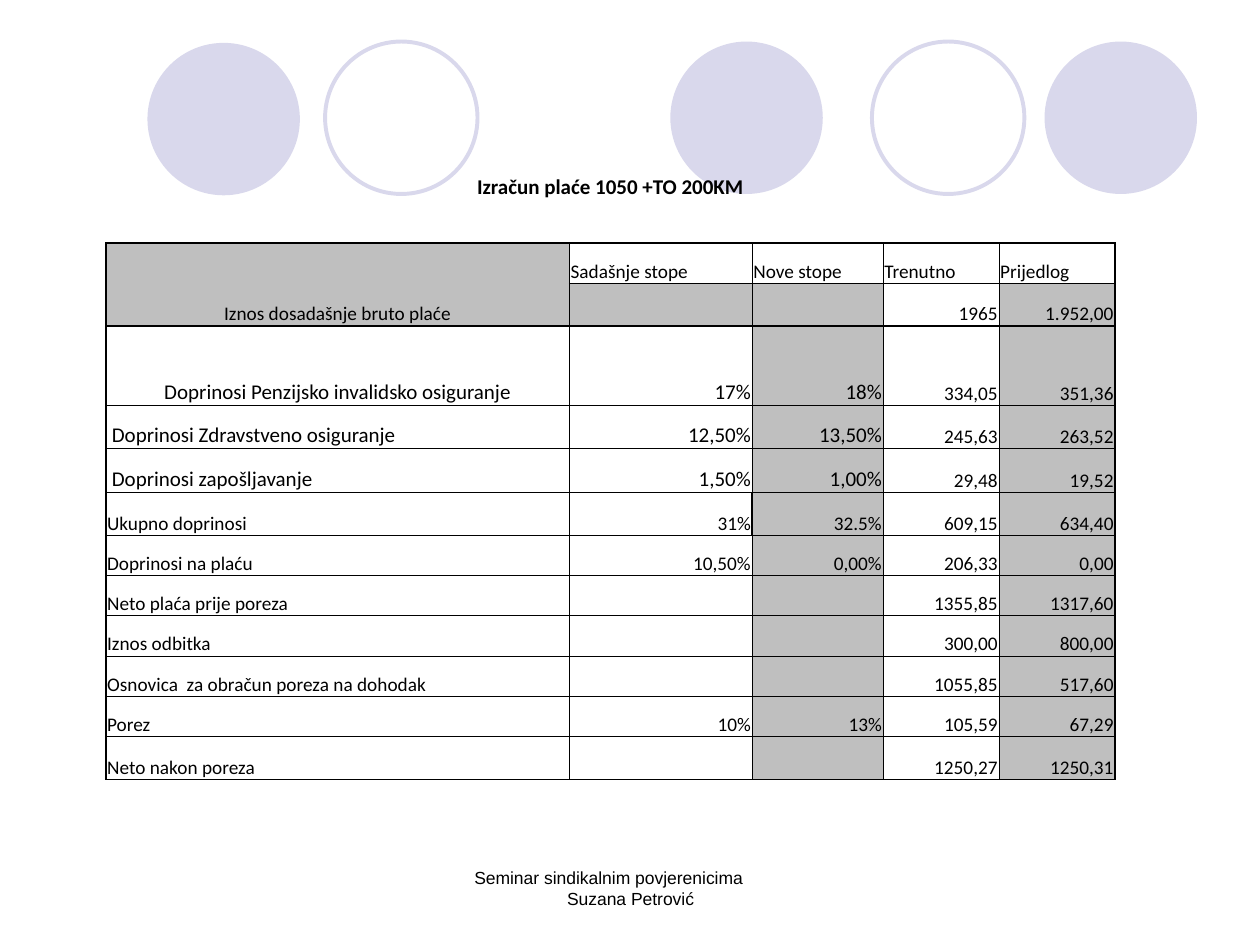
from lxml import etree
from pptx import Presentation
from pptx import util as u
from pptx.dml.color import RGBColor
from pptx.enum import shapes, text
from pptx.oxml.ns import qn

BLACK, WHITE, GREY, LILAC = "000000", "FFFFFF", "BFBFBF", "D9D8EC"
LEFT, CENTER, RIGHT = text.PP_ALIGN.LEFT, text.PP_ALIGN.CENTER, text.PP_ALIGN.RIGHT
CIRCLES = [(5.32, 0.33, True), (8.29, 0.33, True), (1.17, 0.34, True),
           (6.92, 0.33, False), (2.58, 0.33, False)]
COLUMNS = [0.92] * 4 + [1.45, 1.04, 0.92, 0.92]
HEIGHTS = [0.34, 0.34, 0.32, 0.34, 0.63, 0.34, 0.35, 0.34] + [0.32] * 5 + [0.34]
FIRST_ROW, LABEL_SPAN, RATE_COLUMNS = 2, 4, (4, 5)
CONTRIBUTION_ROWS = (4, 5, 6)
HEAVY_LINES = (2, 4, 7, 8, 14)
TITLE = "Izračun plaće 1050 +TO 200KM"
ROWS = [
    ("Iznos dosadašnje bruto plaće", "Sadašnje stope", "Nove stope", "Trenutno", "Prijedlog"),
    ("", "", "", "1965", "1.952,00"),
    (" Doprinosi Penzijsko invalidsko osiguranje ", "17%", "18%", "334,05", "351,36"),
    (" Doprinosi Zdravstveno osiguranje", "12,50%", "13,50%", "245,63", "263,52"),
    (" Doprinosi zapošljavanje", "1,50%", "1,00%", "29,48", "19,52"),
    ("Ukupno doprinosi", "31%", "32.5%", "609,15", "634,40"),
    ("Doprinosi na plaću", "10,50%", "0,00%", "206,33", "0,00"),
    ("Neto plaća prije poreza", "", "", "1355,85", "1317,60"),
    ("Iznos odbitka", "", "", "300,00", "800,00"),
    ("Osnovica  za obračun poreza na dohodak", "", "", "1055,85", "517,60"),
    ("Porez", "10%", "13%", "105,59", "67,29"),
    ("Neto nakon poreza", "", "", "1250,27", "1250,31"),
]


def color(value):
    """Turn a hex string into a colour."""
    return RGBColor.from_string(value)


def add_circle(page, left, top, filled):
    """Draw one decorative circle, either solid or as a ring."""
    circle = page.shapes.add_shape(shapes.MSO_SHAPE.OVAL, u.Inches(left), u.Inches(top),
                                   u.Inches(1.21), u.Inches(1.21))
    circle.shadow.inherit = False
    if filled:
        circle.fill.solid()
        circle.fill.fore_color.rgb = color(LILAC)
        circle.line.fill.background()
    else:
        circle.fill.background()
        circle.line.color.rgb = color(LILAC)
        circle.line.width = u.Pt(2.25)


def add_span(para, words, size, font, bold=False):
    """Add one formatted run to a paragraph."""
    span = para.add_run()
    span.text = words
    span.font.size = u.Pt(size)
    span.font.name = font
    span.font.bold = bold
    span.font.color.rgb = color(BLACK)


def add_footer(page):
    """Write the two footer lines, the second set further right."""
    box = page.shapes.add_textbox(u.Inches(3.42), u.Inches(6.83), u.Inches(3.17), u.Inches(0.5))
    frame = box.text_frame
    frame.word_wrap = True
    frame.margin_right = u.Inches(0.45)
    first, second = frame.paragraphs[0], frame.add_paragraph()
    for para, words in ((first, "Seminar sindikalnim povjerenicima"), (second, "Suzana Petrović")):
        para.alignment = CENTER
        add_span(para, words, 10, "Arial")
    second._p.get_or_add_pPr().set("marL", str(u.Inches(0.35)))


def horizontal_weight(line, column):
    """Give the weight of a horizontal grid line, or 0 for none."""
    if line < FIRST_ROW or (line == 3 and column < LABEL_SPAN):
        return 0
    return 1 if line in HEAVY_LINES else 0.5


def vertical_weight(line, row):
    """Give the weight of a vertical grid line, or 0 for none."""
    if row < FIRST_ROW or 0 < line < LABEL_SPAN:
        return 0
    return 1 if line in (0, len(COLUMNS)) or (line, row) == (5, 7) else 0.5


def set_borders(cell, row, column):
    """Set the four borders of a cell from the grid rules."""
    weights = {"a:lnL": vertical_weight(column, row), "a:lnR": vertical_weight(column + 1, row),
               "a:lnT": horizontal_weight(row, column), "a:lnB": horizontal_weight(row + 1, column)}
    properties = cell._tc.get_or_add_tcPr()
    for tag, weight in weights.items():
        line = etree.SubElement(properties, qn(tag), w=str(u.Pt(weight)))
        if weight:
            fill = etree.SubElement(line, qn("a:solidFill"))
            etree.SubElement(fill, qn("a:srgbClr"), val=BLACK)
        else:
            etree.SubElement(line, qn("a:noFill"))


def fill_color(row, column):
    """Choose the fill of a cell, or None for no fill."""
    if row < FIRST_ROW:
        return None
    if row in (2, 3):
        grey = column < LABEL_SPAN or (row == 3 and column != 6)
    else:
        grey = column in (5, 7)
    if grey:
        return GREY
    return WHITE if row in CONTRIBUTION_ROWS and column != 6 else None


def format_cell(cell, row, column):
    """Apply borders, fill, insets and anchor to a cell."""
    set_borders(cell, row, column)
    fill = fill_color(row, column)
    if fill:
        cell.fill.solid()
        cell.fill.fore_color.rgb = color(fill)
    else:
        cell.fill.background()
    cell.margin_left = cell.margin_top = cell.margin_right = u.Inches(0.01)
    cell.margin_bottom = 0
    cell.vertical_anchor = text.MSO_ANCHOR.BOTTOM


def write_cell(cell, words, align, size, bold=False):
    """Write one aligned line into a cell."""
    para = cell.text_frame.paragraphs[0]
    para.alignment = align
    add_span(para, words, size, "Calibri", bold)


def write_row(table, row, entries):
    """Write a label and its four values into a table row."""
    for column, words in zip((0, 4, 5, 6, 7), entries):
        if not words:
            continue
        if column == 0:
            align = CENTER if row in (2, 4) else LEFT
        else:
            align = LEFT if row == FIRST_ROW else RIGHT
        large = row in CONTRIBUTION_ROWS and column in (0, *RATE_COLUMNS)
        write_cell(table.cell(row, column), words, align, 12 if large else 11)


def add_salary_table(page):
    """Build the salary calculation table."""
    table = page.shapes.add_table(len(HEIGHTS), len(COLUMNS), u.Inches(0.84), u.Inches(1.25),
                                  u.Inches(sum(COLUMNS)), u.Inches(sum(HEIGHTS))).table
    table.first_row = table.horz_banding = False
    for column, width in zip(table.columns, COLUMNS):
        column.width = u.Inches(width)
    for row, height in enumerate(HEIGHTS):
        table.rows[row].height = u.Inches(height)
        for column in range(len(COLUMNS)):
            format_cell(table.cell(row, column), row, column)
    table.cell(0, 0).merge(table.cell(0, len(COLUMNS) - 1))
    table.cell(2, 0).merge(table.cell(3, LABEL_SPAN - 1))
    for row in range(4, len(HEIGHTS)):
        last = 1 if row == 10 else LABEL_SPAN - 1
        table.cell(row, 0).merge(table.cell(row, last))
    write_cell(table.cell(0, 0), TITLE, CENTER, 12, True)
    for row, entries in enumerate(ROWS, FIRST_ROW):
        write_row(table, row, entries)


def main():
    """Build and save the slide."""
    deck = Presentation()
    deck.slide_width, deck.slide_height = u.Inches(10), u.Inches(7.5)
    page = deck.slides.add_slide(deck.slide_layouts[6])
    for left, top, filled in CIRCLES:
        add_circle(page, left, top, filled)
    add_footer(page)
    add_salary_table(page)
    deck.save("out.pptx")


if __name__ == "__main__":
    main()
